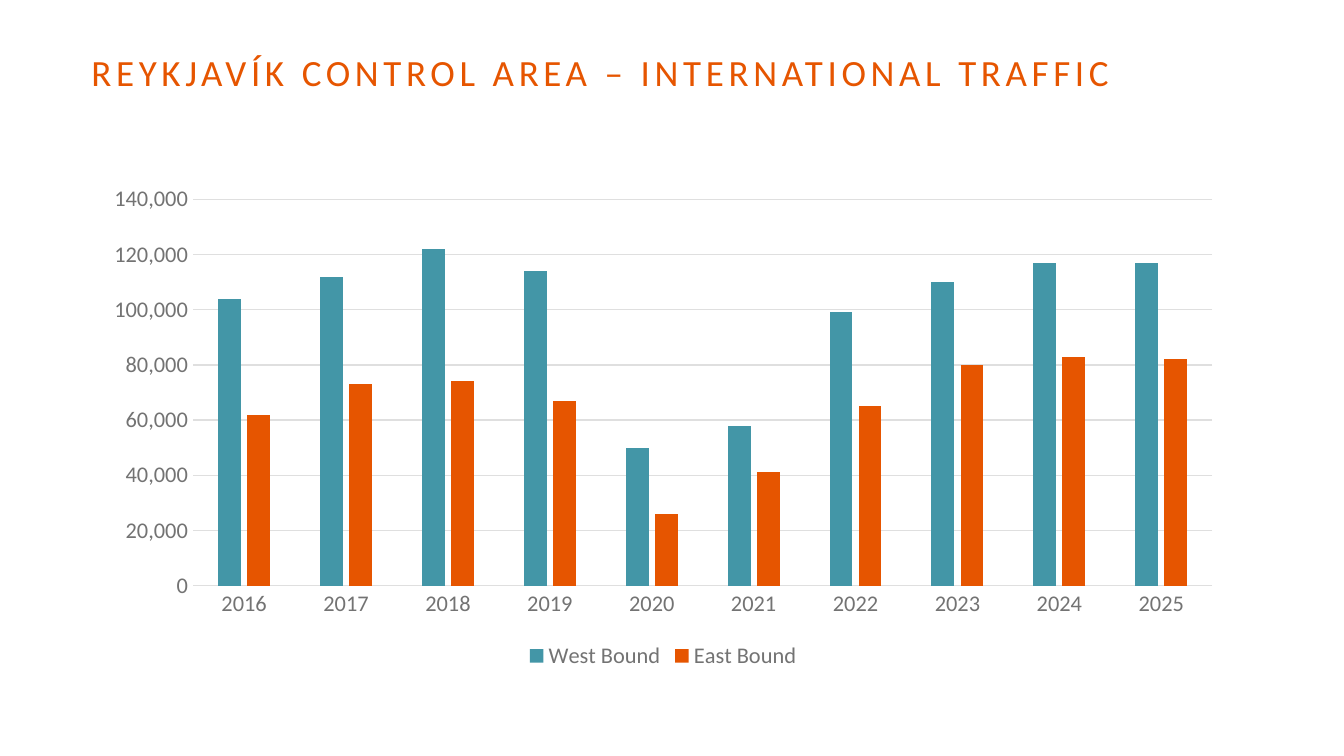
import pptx
import pptx.chart.data
import pptx.dml.color
import pptx.enum.chart
import pptx.enum.text
import pptx.util

Inches = pptx.util.Inches
Pt = pptx.util.Pt
Color = pptx.dml.color.RGBColor.from_string

# Content
TITLE = "REYKJAVÍK CONTROL AREA – INTERNATIONAL TRAFFIC"
YEARS = [str(year) for year in range(2016, 2026)]
FLIGHTS = {
    "West Bound": [104000, 112000, 122000, 114000, 50000,
                   58000, 99000, 110000, 117000, 117000],
    "East Bound": [62000, 73000, 74000, 67000, 26000,
                   41000, 65000, 80000, 83000, 82000],
}

THEME = {
    "font": "Calibri",
    "title": "E65500",
    "label": "737373",
    "rule": "DFDFDF",
    "series": ["4396A7", "E65500"],
    "title_size": 19.8,
    "label_size": 12,
    "rule_width": 0.75,
}


def style_font(font, size, color):
    font.name = THEME["font"]
    font.size = Pt(size)
    font.bold = False
    font.color.rgb = Color(color)


def style_rule(line):
    line.color.rgb = Color(THEME["rule"])
    line.width = Pt(THEME["rule_width"])


def add_title(page):
    box = page.shapes.add_textbox(
        Inches(0.68), Inches(0.18), Inches(8.18), Inches(0.67))
    frame = box.text_frame
    frame.word_wrap = True
    frame.vertical_anchor = pptx.enum.text.MSO_ANCHOR.MIDDLE
    frame.margin_left = frame.margin_right = 0
    frame.margin_top = frame.margin_bottom = 0
    para = frame.paragraphs[0]
    para.line_spacing = Pt(26)
    span = para.add_run()
    span.text = TITLE
    style_font(span.font, THEME["title_size"], THEME["title"])
    # Letter spacing in hundredths of a point
    span.font._element.set("spc", "250")


def add_traffic_chart(page):
    chart_data = pptx.chart.data.CategoryChartData(number_format="#,##0")
    chart_data.categories = YEARS
    for name, values in FLIGHTS.items():
        chart_data.add_series(name, values)
    chart = page.shapes.add_chart(
        pptx.enum.chart.XL_CHART_TYPE.COLUMN_CLUSTERED,
        Inches(0.68), Inches(1.31), Inches(8.51), Inches(3.71),
        chart_data).chart
    chart.has_title = False
    style_font(chart.font, THEME["label_size"], THEME["label"])

    # Columns
    plot = chart.plots[0]
    plot.vary_by_categories = False
    plot.gap_width = 219
    plot.overlap = -27
    for series, color in zip(plot.series, THEME["series"]):
        series.format.fill.solid()
        series.format.fill.fore_color.rgb = Color(color)
        series.invert_if_negative = False

    # Axes
    for axis in (chart.category_axis, chart.value_axis):
        axis.major_tick_mark = pptx.enum.chart.XL_TICK_MARK.NONE
        axis.minor_tick_mark = pptx.enum.chart.XL_TICK_MARK.NONE
        style_font(axis.tick_labels.font, THEME["label_size"], THEME["label"])
    style_rule(chart.category_axis.format.line)
    value_axis = chart.value_axis
    value_axis.minimum_scale = 0
    value_axis.maximum_scale = 140000
    value_axis.major_unit = 20000
    value_axis.format.line.fill.background()
    style_rule(value_axis.major_gridlines.format.line)
    value_axis.tick_labels.number_format = "#,##0"
    value_axis.tick_labels.number_format_is_linked = False

    # Legend
    chart.has_legend = True
    chart.legend.position = pptx.enum.chart.XL_LEGEND_POSITION.BOTTOM
    chart.legend.include_in_layout = False
    style_font(chart.legend.font, THEME["label_size"], THEME["label"])


def main():
    deck = pptx.Presentation()
    # Widescreen page, 16:9
    deck.slide_width = Inches(10)
    deck.slide_height = deck.slide_width * 9 // 16
    page = deck.slides.add_slide(deck.slide_layouts[6])
    add_title(page)
    add_traffic_chart(page)
    deck.save("out.pptx")


if __name__ == "__main__":
    main()
